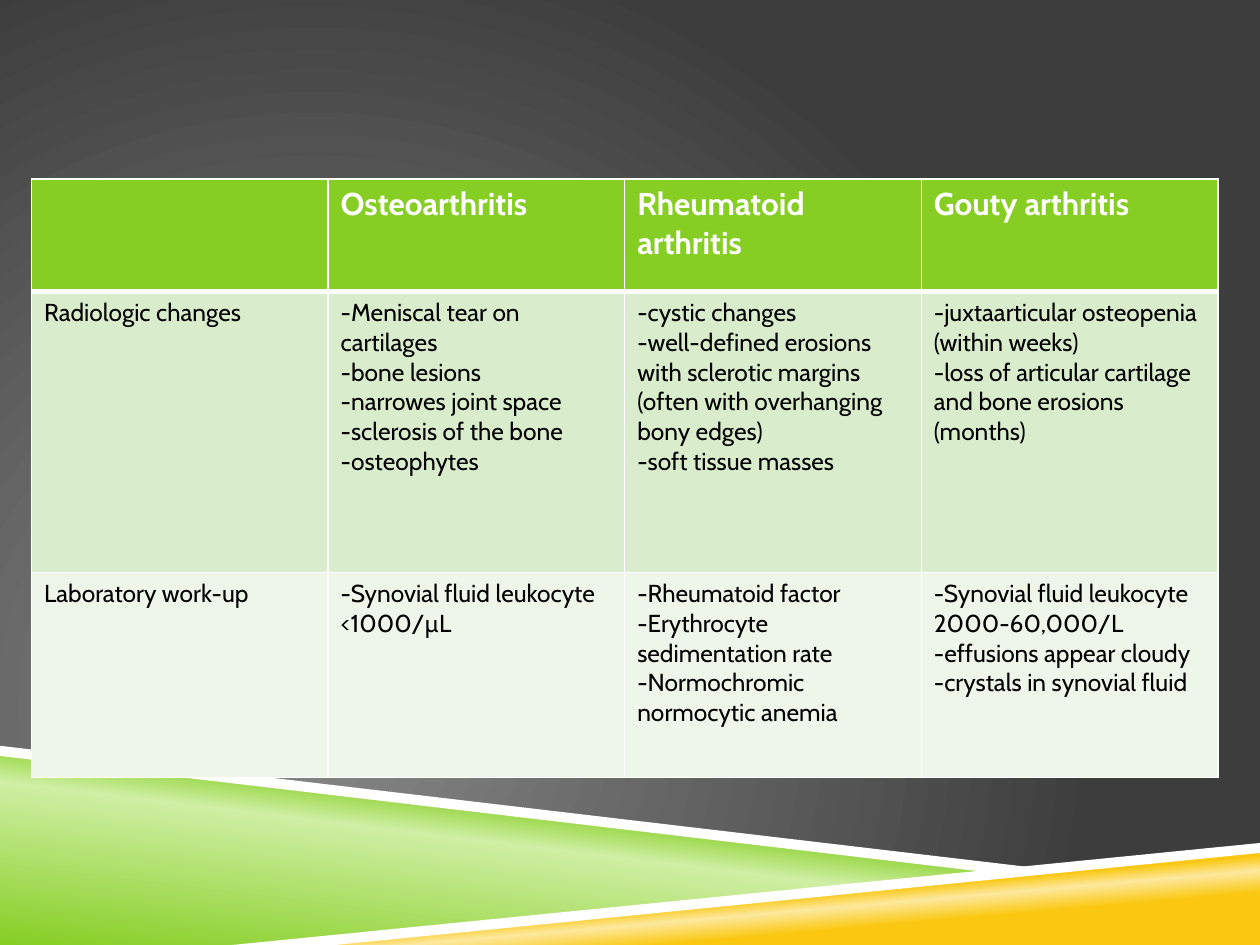
"""Build a slide with a table comparing three kinds of arthritis."""
from pptx import Presentation
from pptx.dml.color import RGBColor
from pptx.oxml import parse_xml
from pptx.oxml.ns import nsdecls, qn
from pptx.util import Pt

WHITE = "FFFFFF"
GREEN = "86CE24"
YELLOW = "FAC810"


def color(hex_text):
    return RGBColor.from_string(hex_text)


def write_text(frame, text, size=14, bold=False, ink="000000", font="Cabin"):
    for index, line in enumerate(text.split("\n")):
        paragraph = frame.paragraphs[0] if index == 0 else frame.add_paragraph()
        run = paragraph.add_run()
        run.text = line
        run.font.name = font
        run.font.size = Pt(size)
        run.font.bold = bold
        run.font.color.rgb = color(ink)


presentation = Presentation()
presentation.slide_width = Pt(720)
presentation.slide_height = Pt(540)
slide = presentation.slides.add_slide(presentation.slide_layouts[6])

slide.background.fill.gradient()
backdrop = (
    '<a:path path="circle"><a:fillToRect l="50000" t="100000" r="100000" b="50000"/></a:path>'
)
gradients = [
    (slide.element.find(".//" + qn("a:gradFill")), [(0, "878787"), (100, "3D3D3D")], backdrop)
]

bands = [
    ([(0, 429.8), (570.2, 498.2), (144, 540), (0, 540)],
     [(0, GREEN), (52, "CFEFA4"), (66, GREEN)], 277),
    ([(142.6, 540), (720, 483.8), (720, 540)],
     [(28, YELLOW), (40, "FDE99F"), (48, YELLOW)], 265),
    ([(0, 426.2), (0, 432), (568.8, 499), (599, 496.8)], None, None),
    ([(720, 481.7), (132.5, 540), (191.5, 540), (720, 487.4)], None, None),
]
for points, stops, angle in bands:
    corners = [(Pt(x), Pt(y)) for x, y in points]
    builder = slide.shapes.build_freeform(*corners[0], scale=1.0)
    builder.add_line_segments(corners[1:], close=True)
    shape = builder.convert_to_shape()
    shape.shadow.inherit = False
    shape.line.fill.background()
    if stops:
        shape.fill.gradient()
        direction = f'<a:lin ang="{angle * 60000}" scaled="0"/>'
        gradients.append((shape.element.spPr.find(qn("a:gradFill")), stops, direction))
    else:
        shape.fill.solid()
        shape.fill.fore_color.rgb = color(WHITE)

for element, stops, direction in gradients:
    stop_list = "".join(
        f'<a:gs pos="{position * 1000}"><a:srgbClr val="{value}"/></a:gs>'
        for position, value in stops
    )
    element.getparent().replace(element, parse_xml(
        f'<a:gradFill {nsdecls("a")} rotWithShape="1">'
        f"<a:gsLst>{stop_list}</a:gsLst>{direction}</a:gradFill>"
    ))

rows = [
    ["", "Osteoarthritis", "Rheumatoid arthritis", "Gouty arthritis"],
    [
        "Radiologic changes",
        "-Meniscal tear on cartilages\n-bone lesions\n-narrowes joint space\n"
        "-sclerosis of the bone\n-osteophytes",
        "-cystic changes\n-well-defined erosions with sclerotic margins "
        "(often with overhanging bony edges)\n-soft tissue masses",
        "-juxtaarticular osteopenia (within weeks)\n"
        "-loss of articular cartilage and bone erosions (months)",
    ],
    [
        "Laboratory work-up",
        "-Synovial fluid leukocyte <1000/µL",
        "-Rheumatoid factor\n-Erythrocyte sedimentation rate\n"
        "-Normochromic normocytic anemia",
        "-Synovial fluid leukocyte 2000-60,000/L\n-effusions appear cloudy\n"
        "-crystals in synovial fluid",
    ],
]
row_heights = [64.3, 160.5, 117.2]
row_fills = [GREEN, "D9EDCD", "EDF6E8"]
header_format = {"size": 18, "bold": True, "ink": WHITE}

table = slide.shapes.add_table(3, 4, Pt(18), Pt(102.3), Pt(678), Pt(342)).table
for column in table.columns:
    column.width = Pt(169.5)
for row_index, texts in enumerate(rows):
    table.rows[row_index].height = Pt(row_heights[row_index])
    border_widths = {
        "lnL": 1,
        "lnR": 1,
        "lnT": 3 if row_index == 1 else 1,
        "lnB": 3 if row_index == 0 else 1,
    }
    for column_index, text in enumerate(texts):
        cell = table.cell(row_index, column_index)
        properties = cell._tc.get_or_add_tcPr()
        for side, width in border_widths.items():
            properties.append(parse_xml(
                f'<a:{side} {nsdecls("a")} w="{Pt(width)}"><a:solidFill>'
                f'<a:srgbClr val="{WHITE}"/></a:solidFill></a:{side}>'
            ))
        cell.fill.solid()
        cell.fill.fore_color.rgb = color(row_fills[row_index])
        if text:
            write_text(cell.text_frame, text, **(header_format if row_index == 0 else {}))

presentation.save("out.pptx")
